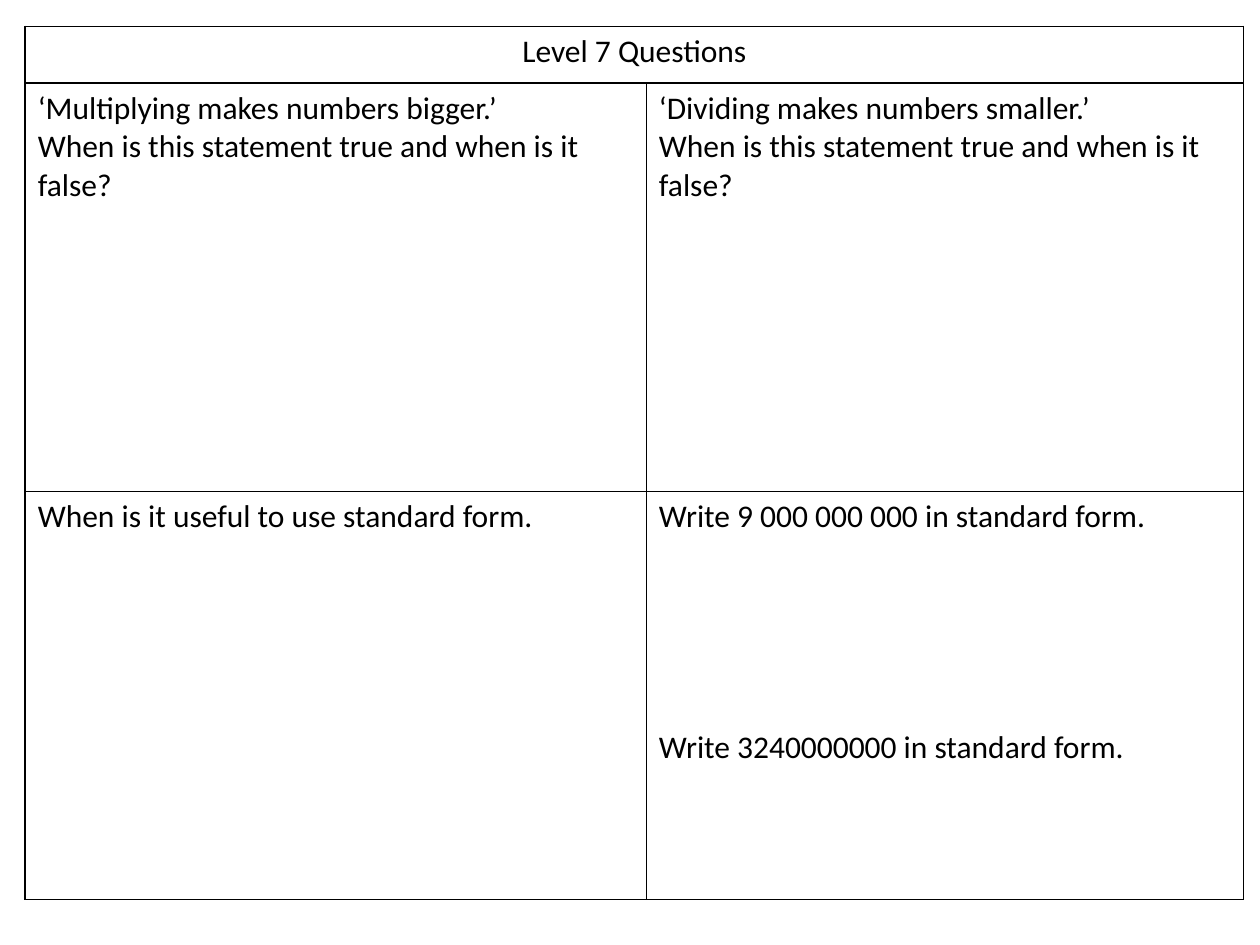
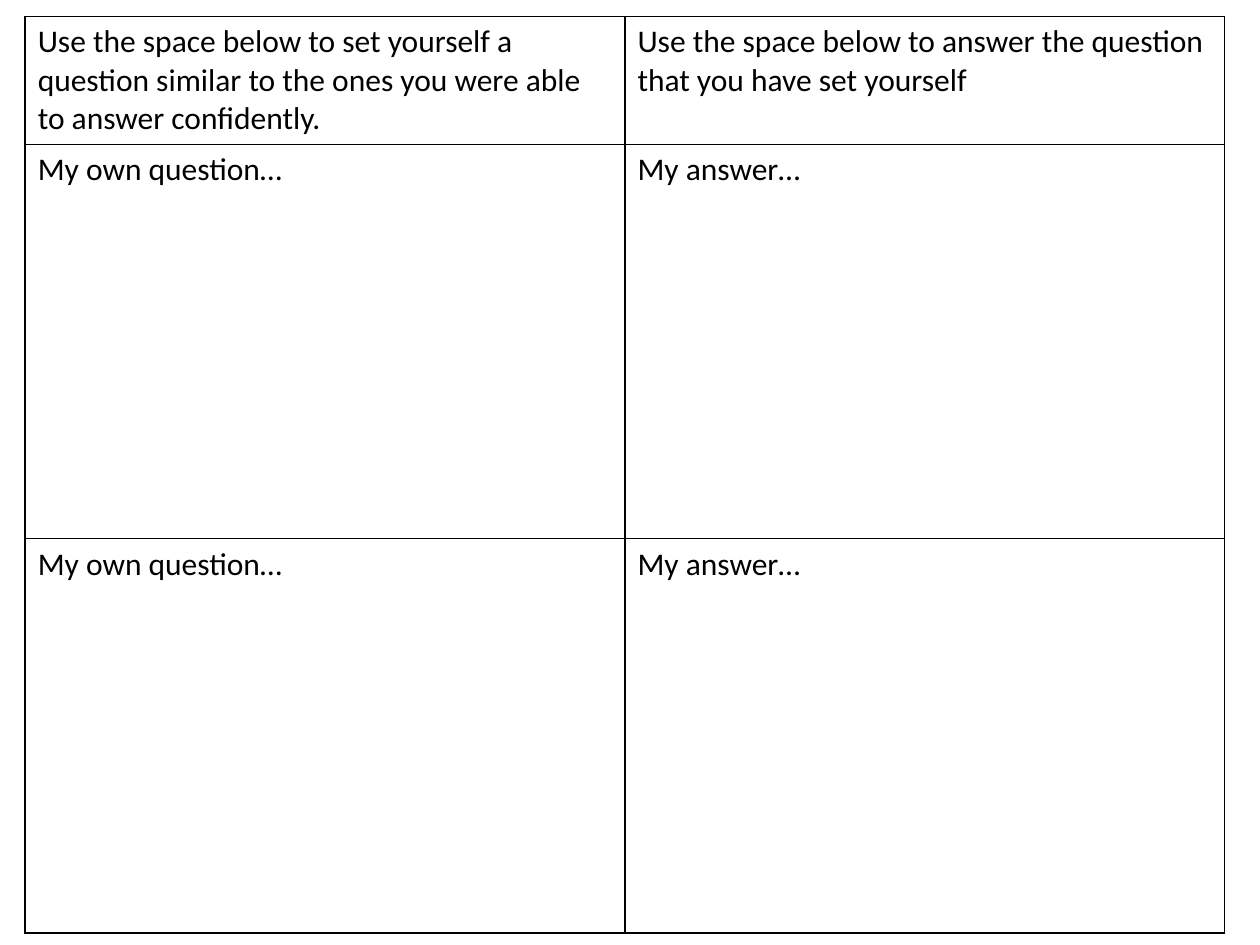
from lxml import etree
from pptx import Presentation
from pptx.dml.color import RGBColor
from pptx.enum import text
from pptx.oxml import ns
from pptx.util import Inches, Pt

# Shared style
COLORS = {"ink": "000000", "line": "000000"}
FONT, SIZE = "Calibri", Pt(18)
BORDER = Pt(1)
LEFT = 0.2
ANSWER_GAP = Pt(110)  # room to write between two questions in one cell

# Content: each cell is a list of paragraphs; a one-cell row spans the table
TRUE_FALSE = "When is this statement true and when is it false?"
OWN_ROW = [["My own question…"], ["My answer…"]]
SHEETS = [
    {
        "top": 0.21, "cols": [4.93, 4.74], "rows": [0.45, 3.24, 3.24],
        "cells": [
            [["Level 7 Questions"]],
            [["‘Multiplying makes numbers bigger.’", TRUE_FALSE],
             ["‘Dividing makes numbers smaller.’", TRUE_FALSE]],
            [["When is it useful to use standard form."],
             ["Write 9 000 000 000 in standard form.",
              ("Write 3240000000 in standard form.", ANSWER_GAP)]],
        ],
    },
    {
        "top": 0.13, "cols": [4.76, 4.76], "rows": [0.98, 3.13, 3.13],
        "cells": [
            [["Use the space below to set yourself a question similar to "
              "the ones you were able to answer confidently."],
             ["Use the space below to answer the question that you have "
              "set yourself"]],
            OWN_ROW,
            OWN_ROW,
        ],
    },
]


def style_cell(cell):
    """Black outline on all four sides, no fill."""
    tc_pr = cell._tc.get_or_add_tcPr()
    for side in ("a:lnL", "a:lnR", "a:lnT", "a:lnB"):
        ln = etree.SubElement(tc_pr, ns.qn(side), w=str(BORDER))
        fill = etree.SubElement(ln, ns.qn("a:solidFill"))
        etree.SubElement(fill, ns.qn("a:srgbClr"), val=COLORS["line"])
    cell.fill.background()


def write_cell(cell, paragraphs, centred):
    tf = cell.text_frame
    for i, item in enumerate(paragraphs):
        words, gap = item if isinstance(item, tuple) else (item, None)
        p = tf.add_paragraph() if i else tf.paragraphs[0]
        if gap:
            p.space_before = gap
        if centred:
            p.alignment = text.PP_ALIGN.CENTER
        r = p.add_run()
        r.text = words
        r.font.name, r.font.size, r.font.bold = FONT, SIZE, False
        r.font.color.rgb = RGBColor.from_string(COLORS["ink"])


def add_sheet(prs, sheet):
    s = prs.slides.add_slide(prs.slide_layouts[6])
    cols, rows = sheet["cols"], sheet["rows"]
    table = s.shapes.add_table(
        len(rows), len(cols), Inches(LEFT), Inches(sheet["top"]),
        Inches(sum(cols)), Inches(sum(rows))).table
    table.first_row = table.horz_banding = False
    for column, width in zip(table.columns, cols):
        column.width = Inches(width)
    for row, height in zip(table.rows, rows):
        row.height = Inches(height)
    for cell in table.iter_cells():
        style_cell(cell)

    # Text, with heading rows merged across the columns
    for y, row_cells in enumerate(sheet["cells"]):
        is_heading = len(row_cells) == 1
        if is_heading:
            table.cell(y, 0).merge(table.cell(y, len(cols) - 1))
        for x, paragraphs in enumerate(row_cells):
            write_cell(table.cell(y, x), paragraphs, is_heading)


def main():
    prs = Presentation()
    prs.slide_width, prs.slide_height = Inches(10), Inches(7.5)
    for sheet in SHEETS:
        add_sheet(prs, sheet)
    prs.save("out.pptx")


if __name__ == "__main__":
    main()
